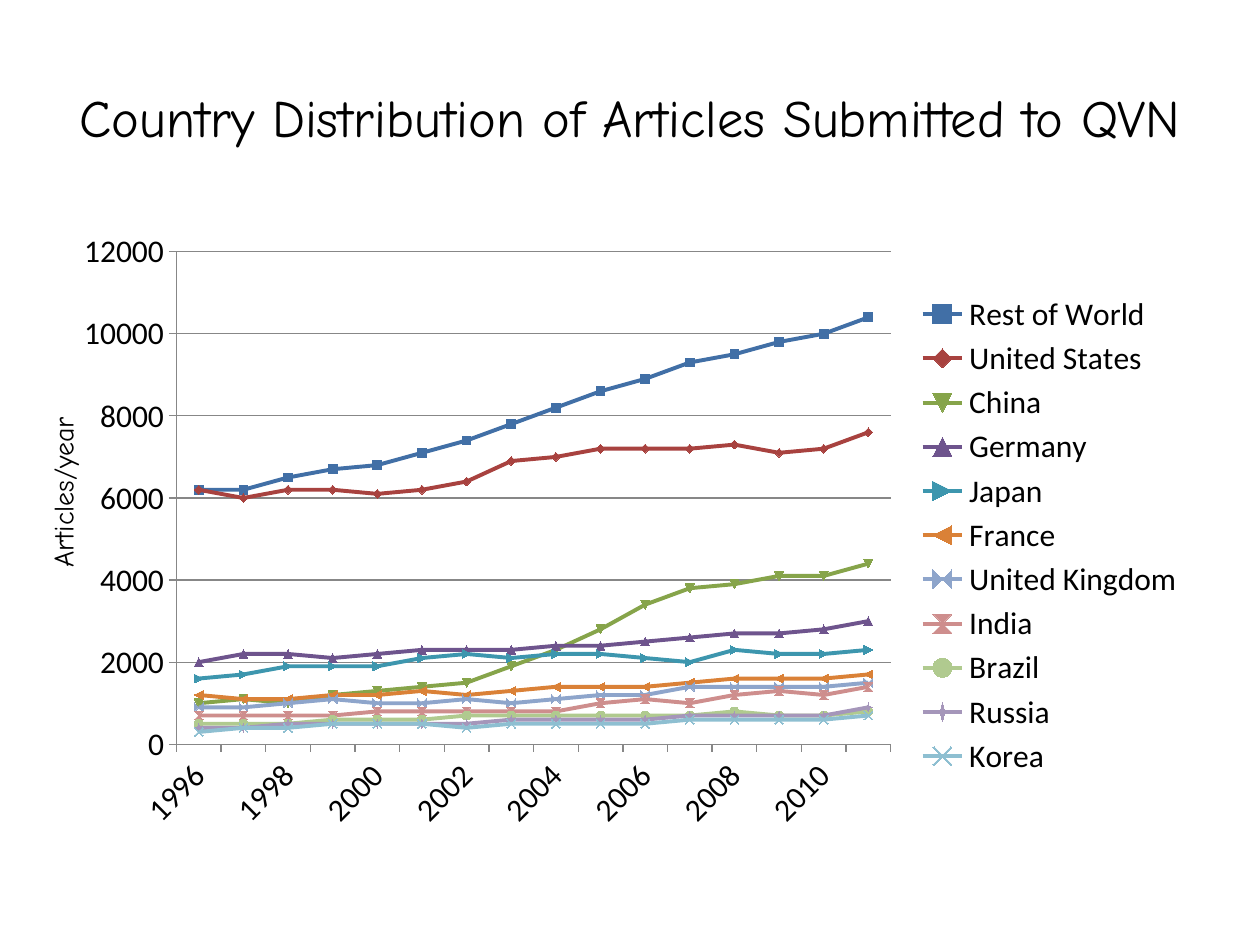
from dataclasses import dataclass

import pptx
import pptx.chart.data
import pptx.dml.color
import pptx.enum.chart
import pptx.enum.text
import pptx.oxml
import pptx.oxml.ns
import pptx.util

Pt = pptx.util.Pt
RGB = pptx.dml.color.RGBColor.from_string
qn = pptx.oxml.ns.qn
CHART_NS = pptx.oxml.ns.nsdecls("c")


@dataclass(frozen=True)
class Theme:
    heading_font: str = "Comic Neue"
    chart_font: str = "Calibri"
    text: str = "000000"
    grid: str = "878787"
    title_size: int = 30
    chart_size: int = 18
    axis_title_size: int = 16
    marker_size: int = 5
    line_width: float = 2.25
    grid_width: float = 0.75


THEME = Theme()
YEARS = range(1996, 2012)
COUNTRIES = [
    ("Rest of World", "416FA6", [6200, 6200, 6500, 6700, 6800, 7100, 7400, 7800,
                                 8200, 8600, 8900, 9300, 9500, 9800, 10000, 10400]),
    ("United States", "A8423F", [6200, 6000, 6200, 6200, 6100, 6200, 6400, 6900,
                                 7000, 7200, 7200, 7200, 7300, 7100, 7200, 7600]),
    ("China", "86A44A", [1000, 1100, 1000, 1200, 1300, 1400, 1500, 1900,
                         2300, 2800, 3400, 3800, 3900, 4100, 4100, 4400]),
    ("Germany", "6E548D", [2000, 2200, 2200, 2100, 2200, 2300, 2300, 2300,
                           2400, 2400, 2500, 2600, 2700, 2700, 2800, 3000]),
    ("Japan", "3D96AE", [1600, 1700, 1900, 1900, 1900, 2100, 2200, 2100,
                         2200, 2200, 2100, 2000, 2300, 2200, 2200, 2300]),
    ("France", "DA8137", [1200, 1100, 1100, 1200, 1200, 1300, 1200, 1300,
                          1400, 1400, 1400, 1500, 1600, 1600, 1600, 1700]),
    ("United Kingdom", "8EA5CB", [900, 900, 1000, 1100, 1000, 1000, 1100, 1000,
                                  1100, 1200, 1200, 1400, 1400, 1400, 1400, 1500]),
    ("India", "CE8E8D", [700, 700, 700, 700, 800, 800, 800, 800,
                         800, 1000, 1100, 1000, 1200, 1300, 1200, 1400]),
    ("Brazil", "B0CA8F", [500, 500, 500, 600, 600, 600, 700, 700,
                          700, 700, 700, 700, 800, 700, 700, 800]),
    ("Russia", "A596BA", [400, 400, 500, 500, 500, 500, 500, 600,
                          600, 600, 600, 700, 700, 700, 700, 900]),
    ("Korea", "8EBFD1", [300, 400, 400, 500, 500, 500, 400, 500,
                         500, 500, 500, 600, 600, 600, 600, 700]),
]


def add_label(slide, box, words, size, rotation=0):
    label = slide.shapes.add_textbox(*map(Pt, box))
    label.rotation = rotation
    frame = label.text_frame
    frame.word_wrap = True
    frame.vertical_anchor = pptx.enum.text.MSO_ANCHOR.MIDDLE
    frame.text = words
    paragraph = frame.paragraphs[0]
    paragraph.alignment = pptx.enum.text.PP_ALIGN.CENTER
    font = paragraph.runs[0].font
    font.name, font.size = THEME.heading_font, Pt(size)
    font.color.rgb = RGB(THEME.text)


def style_line(line, color, width):
    line.color.rgb = RGB(color)
    line.width = Pt(width)


def set_layout(region, position, x, y, width, height, target=""):
    for layout in region.findall(qn("c:layout")):
        region.remove(layout)
    region.insert(position, pptx.oxml.parse_xml(
        f'<c:layout {CHART_NS}><c:manualLayout>{target}'
        '<c:xMode val="edge"/><c:yMode val="edge"/>'
        f'<c:x val="{x}"/><c:y val="{y}"/><c:w val="{width}"/><c:h val="{height}"/>'
        '</c:manualLayout></c:layout>'))


def style_axes(chart):
    years, articles = chart.category_axis, chart.value_axis
    for axis in (years, articles):
        axis.major_tick_mark = pptx.enum.chart.XL_TICK_MARK.OUTSIDE
        axis.minor_tick_mark = pptx.enum.chart.XL_TICK_MARK.NONE
        style_line(axis.format.line, THEME.grid, THEME.grid_width)
    articles.minimum_scale, articles.maximum_scale = 0, 12000
    articles.major_unit = 2000
    articles.has_major_gridlines = True
    style_line(articles.major_gridlines.format.line, THEME.grid, THEME.grid_width)
    articles.tick_labels.number_format = "0"
    articles.tick_labels.number_format_is_linked = False
    years.tick_labels.font.size = Pt(THEME.chart_size)
    years_xml = chart._chartSpace.find(".//" + qn("c:catAx"))
    years_xml.find(".//" + qn("a:bodyPr")).set("rot", "-2700000")
    years_xml.find(qn("c:noMultiLvlLbl")).addprevious(
        pptx.oxml.parse_xml(f'<c:tickLblSkip {CHART_NS} val="2"/>'))


def style_series(series, color):
    series.smooth = False
    style_line(series.format.line, color, THEME.line_width)
    series.marker.size = THEME.marker_size
    series.marker.format.fill.solid()
    series.marker.format.fill.fore_color.rgb = RGB(color)
    series.marker.format.line.color.rgb = RGB(color)


def add_articles_chart(slide, box):
    articles = pptx.chart.data.CategoryChartData(number_format="0")
    articles.categories = [str(year) for year in YEARS]
    for country, _, counts in COUNTRIES:
        articles.add_series(country, counts)
    chart = slide.shapes.add_chart(
        pptx.enum.chart.XL_CHART_TYPE.LINE_MARKERS, *map(Pt, box), articles).chart
    chart.has_title = False
    chart.font.name, chart.font.size = THEME.chart_font, Pt(THEME.chart_size)
    chart.font.color.rgb = RGB(THEME.text)
    chart.plots[0].vary_by_categories = False
    for series, (_, color, _) in zip(chart.plots[0].series, COUNTRIES):
        style_series(series, color)
    style_axes(chart)

    chart.has_legend = True
    chart.legend.position = pptx.enum.chart.XL_LEGEND_POSITION.RIGHT
    chart.legend.include_in_layout = False
    set_layout(chart._chartSpace.find(".//" + qn("c:plotArea")), 0,
               0.1, 0.05, 0.63, 0.79, '<c:layoutTarget val="inner"/>')
    set_layout(chart._chartSpace.find(".//" + qn("c:legend")), 1,
               0.75, 0.11, 0.24, 0.79)


def main():
    deck = pptx.Presentation()
    deck.slide_width, deck.slide_height = Pt(720), Pt(540)
    slide = deck.slides.add_slide(deck.slide_layouts[6])
    add_label(slide, (36, 21.6, 648, 90),
              "Country Distribution of Articles Submitted to QVN", THEME.title_size)
    add_articles_chart(slide, (36, 126, 648, 356.4))
    add_label(slide, (-105, 268, 281.5, 26.6), "Articles/year",
              THEME.axis_title_size, rotation=270)
    deck.save("out.pptx")


if __name__ == "__main__":
    main()
